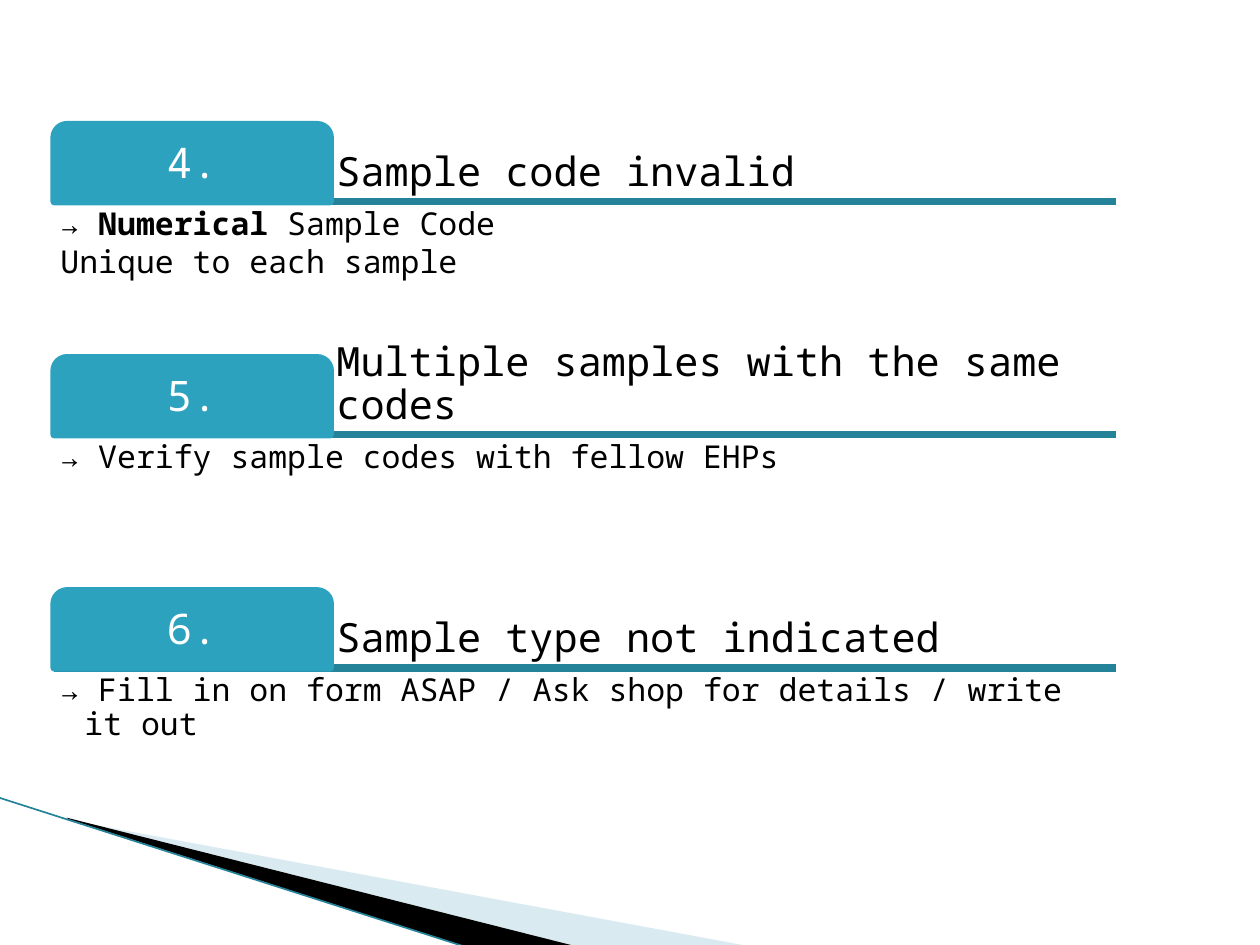
from dataclasses import dataclass

from lxml import etree
from pptx import Presentation
from pptx.dml.color import RGBColor
from pptx.enum.shapes import MSO_CONNECTOR, MSO_SHAPE
from pptx.enum.text import MSO_ANCHOR, PP_ALIGN
from pptx.oxml.ns import qn
from pptx.util import Inches, Pt

STRAIGHT = MSO_CONNECTOR.STRAIGHT
TAB_SHAPE = MSO_SHAPE.ROUND_2_SAME_RECTANGLE
TOP, MIDDLE, BOTTOM = MSO_ANCHOR.TOP, MSO_ANCHOR.MIDDLE, MSO_ANCHOR.BOTTOM
LEFT, CENTER = PP_ALIGN.LEFT, PP_ALIGN.CENTER


@dataclass(frozen=True)
class Theme:
    font: str = "Noto Sans Mono"
    ink: str = "000000"
    white: str = "FFFFFF"
    teal: str = "2DA2BF"
    dark_teal: str = "248299"
    pale_blue: str = "A0CBDC"
    title_size: float = 23
    number_size: float = 24
    detail_size: float = 18
    rule_width: float = 4.33
    hairline: float = 0.95


class SlideBuilder:
    def __init__(self, slide, theme):
        self.shapes = slide.shapes
        self.theme = theme

    def wedge(self, points, color, opacity=100):
        start, *rest = [(Inches(x), Inches(y)) for x, y in points]
        builder = self.shapes.build_freeform(*start)
        builder.add_line_segments(rest, close=True)
        wedge = builder.convert_to_shape()
        wedge.shadow.inherit = False
        wedge.fill.solid()
        wedge.fill.fore_color.rgb = RGBColor.from_string(color)
        wedge.line.fill.background()
        if opacity < 100:
            tint = wedge._element.spPr.find(qn("a:solidFill"))[0]
            etree.SubElement(tint, qn("a:alpha"), val=str(opacity * 1000))

    def line(self, start, end, color, width):
        x1, y1, x2, y2 = [Inches(v) for v in (*start, *end)]
        line = self.shapes.add_connector(STRAIGHT, x1, y1, x2, y2)
        line.line.color.rgb = RGBColor.from_string(color)
        line.line.width = Pt(width)
        etree.SubElement(line._element.spPr, qn("a:effectLst"))

    def tab(self, left, top, width, height):
        tab = self.shapes.add_shape(
            TAB_SHAPE, Inches(left), Inches(top), Inches(width), Inches(height))
        tab.adjustments[0] = 0.167
        tab.adjustments[1] = 0
        tab.shadow.inherit = False
        tab.fill.solid()
        tab.fill.fore_color.rgb = RGBColor.from_string(self.theme.teal)
        tab.line.color.rgb = RGBColor.from_string(self.theme.teal)
        tab.line.width = Pt(self.theme.rule_width)

    def text(self, box, paragraphs, size, color, anchor=TOP, align=LEFT,
             hanging=0, space_after=0):
        frame = self.shapes.add_textbox(*[Inches(v) for v in box]).text_frame
        frame.word_wrap = True
        frame.vertical_anchor = anchor
        frame.margin_left = frame.margin_right = Inches(0.05)
        frame.margin_top = frame.margin_bottom = Inches(0.05)
        for index, runs in enumerate(paragraphs):
            paragraph = frame.add_paragraph() if index else frame.paragraphs[0]
            paragraph.alignment = align
            paragraph.line_spacing = 0.9
            paragraph.space_after = Pt(space_after)
            if hanging:
                properties = paragraph._p.get_or_add_pPr()
                properties.set("marL", str(Inches(hanging)))
                properties.set("indent", str(-Inches(hanging)))
            for words, bold in runs:
                run = paragraph.add_run()
                run.text = words
                run.font.name = self.theme.font
                run.font.size = Pt(size)
                run.font.bold = bold
                run.font.color.rgb = RGBColor.from_string(color)


ISSUES = [
    ("4.", "Sample code invalid",
     [[("→ ", False), ("Numerical", True), (" Sample Code", False)],
      [("Unique to each sample", False)]]),
    ("5.", "Multiple samples with the same codes",
     [[("→ Verify sample codes with fellow EHPs", False)]]),
    ("6.", "Sample type not indicated",
     [[("→ Fill in on form ASAP / Ask shop for details / write it out", False)]]),
]
FIRST_TOP, PITCH = 0.99, 1.85
ISSUE_LEFT, ISSUE_WIDTH = 0.43, 8.43
TAB_WIDTH, TAB_HEIGHT, DETAIL_HEIGHT = 2.19, 0.61, 1.21
NUMBER_INSET = 0.03


def main():
    presentation = Presentation()
    presentation.slide_width = Inches(10)
    presentation.slide_height = Inches(7.5)
    slide = presentation.slides.add_slide(presentation.slide_layouts[6])
    theme = Theme()
    page = SlideBuilder(slide, theme)

    page.wedge([(0.55, 6.51), (5.95, 7.51), (4.56, 7.51), (0.55, 6.5)],
               theme.pale_blue, opacity=40)
    page.wedge([(0.53, 6.49), (4.57, 7.51), (3.72, 7.52), (0.54, 6.5)], theme.ink)
    page.line((-0.01, 6.33), (3.71, 7.52), theme.dark_teal, theme.hairline)

    title_left = ISSUE_LEFT + TAB_WIDTH
    title_width = ISSUE_WIDTH - TAB_WIDTH
    for index, (number, title, details) in enumerate(ISSUES):
        top = FIRST_TOP + index * PITCH
        rule_y = top + TAB_HEIGHT
        page.line((ISSUE_LEFT, rule_y), (ISSUE_LEFT + ISSUE_WIDTH, rule_y),
                  theme.dark_teal, theme.rule_width)
        page.text((title_left, top, title_width, TAB_HEIGHT), [[(title, False)]],
                  theme.title_size, theme.ink, anchor=BOTTOM)
        page.tab(ISSUE_LEFT, top, TAB_WIDTH, TAB_HEIGHT)
        page.text((ISSUE_LEFT + NUMBER_INSET, top + NUMBER_INSET,
                   TAB_WIDTH - 2 * NUMBER_INSET, TAB_HEIGHT - NUMBER_INSET),
                  [[(number, False)]], theme.number_size, theme.white,
                  anchor=MIDDLE, align=CENTER)
        page.text((ISSUE_LEFT, rule_y, ISSUE_WIDTH, DETAIL_HEIGHT), details,
                  theme.detail_size, theme.ink, hanging=0.19, space_after=2.7)

    presentation.save("out.pptx")


if __name__ == "__main__":
    main()
